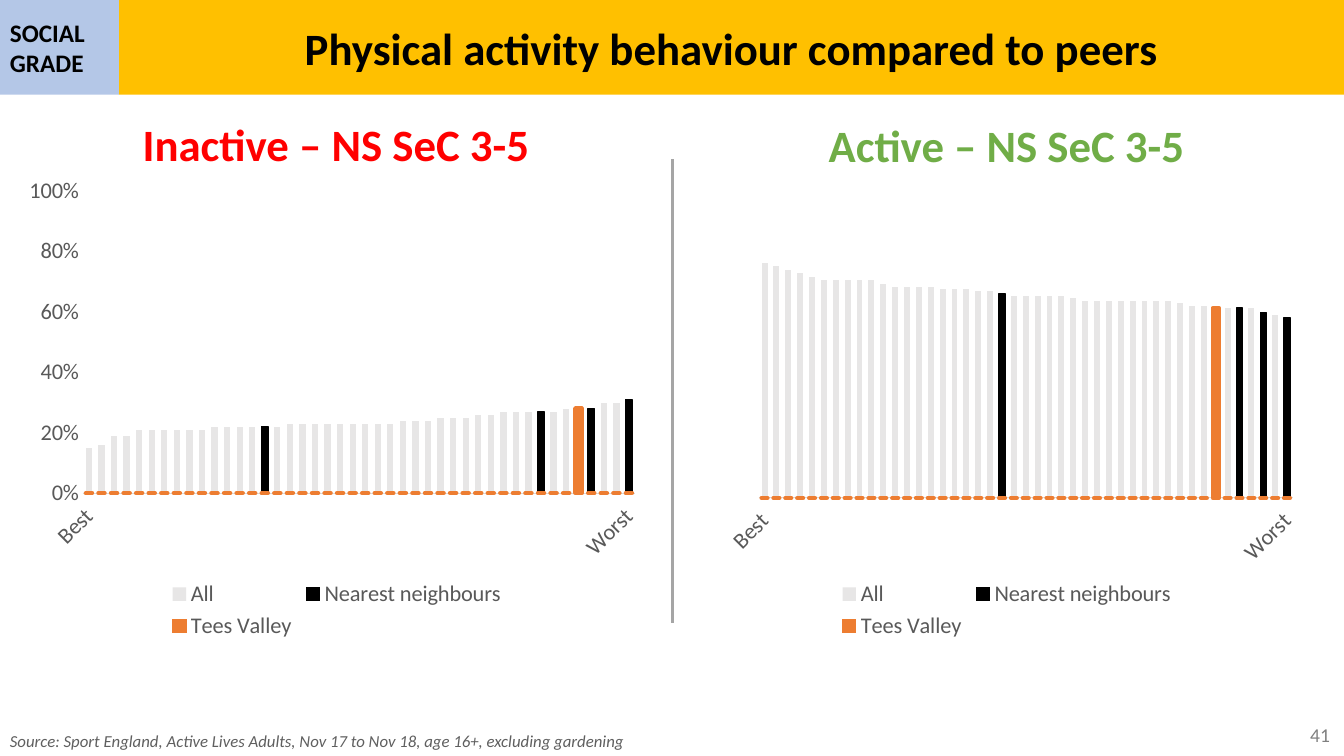
from lxml import etree
from pptx import Presentation
from pptx.chart.data import CategoryChartData
from pptx.dml.color import RGBColor
from pptx.enum.chart import XL_CHART_TYPE, XL_LEGEND_POSITION, XL_TICK_LABEL_POSITION, XL_TICK_MARK
from pptx.enum.shapes import MSO_CONNECTOR, MSO_SHAPE
from pptx.enum.text import MSO_ANCHOR, PP_ALIGN
from pptx.oxml.ns import qn
from pptx.util import Pt

COLUMNS = XL_CHART_TYPE.COLUMN_CLUSTERED
BOTTOM = XL_LEGEND_POSITION.BOTTOM
LOW = XL_TICK_LABEL_POSITION.LOW
NO_TICK = XL_TICK_MARK.NONE
RECTANGLE = MSO_SHAPE.RECTANGLE
STRAIGHT = MSO_CONNECTOR.STRAIGHT
TOP, MIDDLE = MSO_ANCHOR.TOP, MSO_ANCHOR.MIDDLE
LEFT, CENTER, RIGHT = PP_ALIGN.LEFT, PP_ALIGN.CENTER, PP_ALIGN.RIGHT

EMU_PER_PX = 9144  # 100 px to the inch
FONT = "Calibri"
COLORS = {
    "black": "000000", "banner": "FFC000", "tag": "B4C7E7", "inactive": "FF0000",
    "active": "70AD47", "divider": "A5A5A5", "source": "5F5F5F", "number": "808080",
    "label": "595959", "axis": "D9D9D9", "all": "E7E6E6", "valley": "ED7D31",
}

INACTIVE_SHARES = (
    [0.15, 0.16] + [0.19] * 2 + [0.21] * 6 + [0.22] * 6 + [0.23] * 9 + [0.24] * 3
    + [0.25] * 3 + [0.26] * 2 + [0.27] * 5 + [0.28] * 3 + [0.3] * 2 + [0.31]
)
ACTIVE_SCORES = (
    [77, 78, 79] + [81] * 4 + [82] * 2 + [83] + [84] * 8 + [85] + [86] * 5 + [87]
    + [88] * 2 + [89] * 3 + [90] * 4 + [91] + [93] * 5 + [94, 96, 97, 99, 100]
)


def px(length):
    return round(length * EMU_PER_PX)


def rgb(name):
    return RGBColor.from_string(COLORS[name])


def style_font(font, size, color, bold=False, italic=False):
    font.name, font.size = FONT, Pt(size)
    font.bold, font.italic = bold, italic
    font.color.rgb = rgb(color)


def write(shape, text, size, color="black", align=LEFT, anchor=TOP, bold=False, italic=False):
    frame = shape.text_frame
    frame.word_wrap = True
    frame.vertical_anchor = anchor
    para = frame.paragraphs[0]
    para.alignment = align
    span = para.add_run()
    span.text = text
    style_font(span.font, size, color, bold, italic)


def add_text(page, area, text, **text_format):
    write(page.shapes.add_textbox(*map(px, area)), text, **text_format)


def add_block(page, area, fill, text, **text_format):
    block = page.shapes.add_shape(RECTANGLE, *map(px, area))
    block.shadow.inherit = False
    block.fill.solid()
    block.fill.fore_color.rgb = rgb(fill)
    block.line.fill.background()
    write(block, text, anchor=MIDDLE, bold=True, **text_format)


def add_divider(page, x, top, bottom):
    line = page.shapes.add_connector(STRAIGHT, px(x), px(top), px(x), px(bottom))
    line.line.color.rgb = rgb("divider")
    line.line.width = Pt(2)
    etree.SubElement(line._element.spPr, qn("a:effectLst"))


def place_plot(chart, plot_box):
    """Fix the inner plot area, given as fractions of the chart."""
    plot_area = chart._chartSpace.find(".//" + qn("c:plotArea"))
    for old_layout in plot_area.findall(qn("c:layout")):
        plot_area.remove(old_layout)
    layout = etree.Element(qn("c:layout"))
    manual = etree.SubElement(layout, qn("c:manualLayout"))
    settings = [("layoutTarget", "inner"), ("xMode", "edge"), ("yMode", "edge")]
    settings += zip("xywh", map(str, plot_box))
    for tag, value in settings:
        etree.SubElement(manual, qn("c:" + tag)).set("val", value)
    plot_area.insert(0, layout)


def style_series(series, color, line_width):
    series.format.fill.solid()
    series.format.fill.fore_color.rgb = rgb(color)
    if line_width:
        series.format.line.color.rgb = rgb(color)
        series.format.line.width = Pt(line_width)


def style_category_axis(axis, reverse):
    axis.tick_label_position = LOW
    axis.major_tick_mark = axis.minor_tick_mark = NO_TICK
    axis.has_major_gridlines = False
    axis.reverse_order = reverse
    axis.format.line.color.rgb = rgb("axis")
    axis.format.line.width = Pt(0.75)
    style_font(axis.tick_labels.font, 16, "label")
    axis._element.find(".//" + qn("a:bodyPr")).set("rot", "-2700000")


def style_value_axis(axis, maximum, step, visible):
    axis.minimum_scale, axis.maximum_scale, axis.major_unit = 0, maximum, step
    axis.has_major_gridlines = False
    axis.major_tick_mark = axis.minor_tick_mark = NO_TICK
    axis.format.line.fill.background()
    axis.tick_labels.number_format = "0%"
    axis.tick_labels.number_format_is_linked = False
    style_font(axis.tick_labels.font, 16, "label")
    axis.visible = visible


def add_rank_chart(page, area, values, ends, neighbours, valley, maximum, step, plot_box,
                   reverse=False, show_values=True):
    """Draw ranked columns; neighbours and valley are positions to highlight."""
    def only(positions):
        return [value if i in positions else 0 for i, value in enumerate(values)]

    data = CategoryChartData()
    data.categories = [ends[0]] + [""] * (len(values) - 2) + [ends[1]]
    data.add_series("All", values)
    data.add_series("Nearest neighbours", only(neighbours))
    data.add_series("Tees Valley", only([valley]))
    chart = page.shapes.add_chart(COLUMNS, *map(px, area), data).chart
    chart.has_title = False
    style_font(chart.font, 14, "black")
    chart.has_legend = True
    chart.legend.position = BOTTOM
    chart.legend.include_in_layout = False
    style_font(chart.legend.font, 16, "label")

    plot = chart.plots[0]
    plot.gap_width = plot.overlap = 100
    plot.vary_by_categories = False
    for series, color, width in zip(plot.series, ("all", "black", "valley"), (0, 1, 3)):
        style_series(series, color, width)
    style_category_axis(chart.category_axis, reverse)
    style_value_axis(chart.value_axis, maximum, step, show_values)
    place_plot(chart, plot_box)


def main():
    deck = Presentation()
    deck.slide_width, deck.slide_height = px(1333), px(750)
    page = deck.slides.add_slide(deck.slide_layouts[6])

    add_text(page, (1029, 709, 300, 40), "41", size=14, color="number", align=RIGHT, anchor=MIDDLE)
    add_text(page, (0, 111, 667, 64), "Inactive – NS SeC 3-5", size=32, color="inactive",
             align=CENTER, bold=True)
    add_text(page, (665, 112, 667, 64), "Active – NS SeC 3-5", size=32, color="active",
             align=CENTER, bold=True)
    add_block(page, (118, 0, 1215, 94), "banner", "Physical activity behaviour compared to peers",
              size=32, align=CENTER)
    add_block(page, (0, 0, 118, 94), "tag", "SOCIAL GRADE", size=18)
    add_divider(page, 667, 158, 618)
    add_text(page, (0, 720, 997, 30),
             "Source: Sport England, Active Lives Adults, Nov 17 to Nov 18, age 16+, excluding gardening",
             size=12, color="source", italic=True)

    add_rank_chart(page, (19, 156, 630, 483), INACTIVE_SHARES, ("Best", "Worst"),
                   neighbours=(14, 36, 40, 43), valley=39, maximum=1, step=0.2,
                   plot_box=(0.1, 0.07, 0.87, 0.62))
    add_rank_chart(page, (683, 156, 631, 483), ACTIVE_SCORES, ("Worst", "Best"),
                   neighbours=(0, 2, 4, 24), valley=6, maximum=139, step=28,
                   plot_box=(0.11, 0.03, 0.84, 0.67), reverse=True, show_values=False)
    deck.save("out.pptx")


if __name__ == "__main__":
    main()
